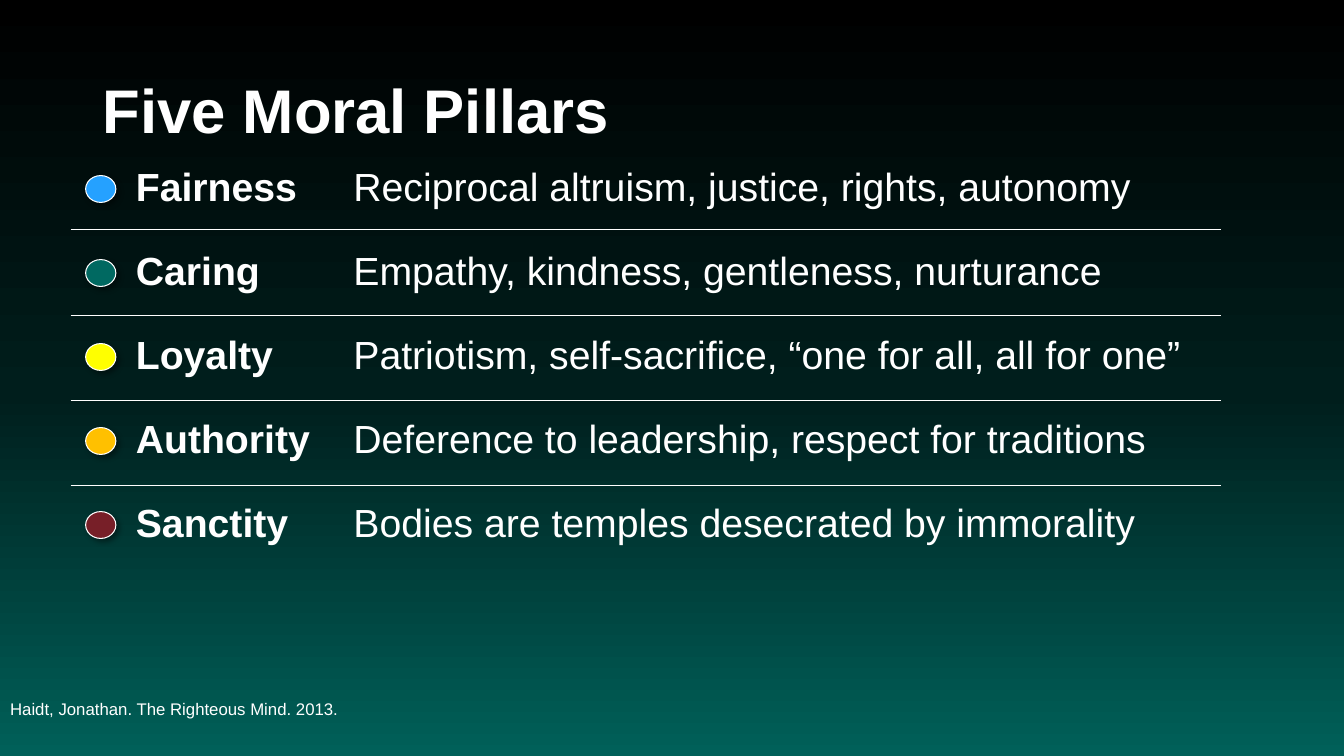
from copy import deepcopy

from lxml import etree
from pptx import Presentation
from pptx import util as u
from pptx.dml.color import RGBColor
from pptx.enum import shapes, text
from pptx.oxml.ns import qn

PILLARS = [
    ("Fairness", "25A1FF", "Reciprocal altruism, justice, rights, autonomy"),
    ("Caring", "006961", "Empathy, kindness, gentleness, nurturance"),
    ("Loyalty", "FFFF00", "Patriotism, self-sacrifice, “one for all, all for one”"),
    ("Authority", "FFC000", "Deference to leadership, respect for traditions"),
    ("Sanctity", "771F28", "Bodies are temples desecrated by immorality"),
]


def rgb(value):
    return RGBColor.from_string(value)


def add(parent, tag, **attributes):
    return etree.SubElement(parent, qn(tag), {k: str(v) for k, v in attributes.items()})


class PillarSlide:
    """Draws styled elements on one slide, measured on a grid of 16 columns by 9 rows."""

    font = "Arial"
    ink = "FFFFFF"
    rule = u.Pt(0.75)

    def __init__(self, deck):
        self.column = deck.slide_width / 16
        self.row = deck.slide_height / 9
        self.slide = deck.slides.add_slide(deck.slide_layouts[1])

    def area(self, left, top, width, height):
        return (int(left * self.column), int(top * self.row),
                int(width * self.column), int(height * self.row))

    def background(self, stops):
        fill = self.slide.background.fill
        fill.gradient()
        fill.gradient_angle = 270
        stop_list = self.slide.element.find(".//" + qn("a:gsLst"))
        while len(stop_list) < len(stops):
            stop_list.append(deepcopy(stop_list[0]))
        for stop, (position, color) in zip(fill.gradient_stops, stops):
            stop.position = position
            stop.color.rgb = rgb(color)

    def wording(self, frame, words, size, bold=False, spacing=1.0,
                anchor=text.MSO_ANCHOR.MIDDLE):
        frame.word_wrap = True
        frame.auto_size = text.MSO_AUTO_SIZE.NONE
        frame.vertical_anchor = anchor
        paragraph = frame.paragraphs[0]
        paragraph.alignment = text.PP_ALIGN.LEFT
        paragraph.line_spacing = spacing
        paragraph.space_before = u.Pt(0)
        run = paragraph.add_run()
        run.text = words
        run.font.name = self.font
        run.font.size = u.Pt(size)
        run.font.bold = bold
        run.font.color.rgb = rgb(self.ink)

    def placeholder(self, index, area, words, size, bold=False):
        holder = self.slide.placeholders[index]
        holder.left, holder.top, holder.width, holder.height = self.area(*area)
        properties = holder.text_frame.paragraphs[0]._p.get_or_add_pPr()
        properties.set("marL", "0")
        properties.set("indent", "0")
        add(properties, "a:buNone")
        self.wording(holder.text_frame, words, size, bold, 0.9)

    def ruled_table(self, area, rows):
        table = self.slide.shapes.add_table(rows, 1, *self.area(*area)).table
        table.first_row = table.horz_banding = False
        for index in range(rows):
            cell = table.cell(index, 0)
            properties = cell._tc.get_or_add_tcPr()
            sides = {"L": False, "R": False, "T": index > 0, "B": index < rows - 1}
            for side, ruled in sides.items():
                border = add(properties, "a:ln" + side, w=self.rule)
                if ruled:
                    add(add(border, "a:solidFill"), "a:srgbClr", val=self.ink)
                else:
                    add(border, "a:noFill")
            cell.fill.background()

    def dot(self, group, area, color):
        dot = group.shapes.add_shape(shapes.MSO_SHAPE.OVAL, *self.area(*area))
        dot.fill.solid()
        dot.fill.fore_color.rgb = rgb(color)
        dot.line.color.rgb = rgb(self.ink)
        dot.line.width = self.rule
        dot.shadow.inherit = False
        effects = dot._element.spPr.find(qn("a:effectLst"))
        shadow = add(effects, "a:outerShdw", blurRad=u.Pt(4), dist=u.Pt(3),
                     dir=45 * 60000, algn="tl", rotWithShape=0)
        add(add(shadow, "a:srgbClr", val="000000"), "a:alpha", val=40000)

    def label(self, parent, area, words, **style):
        box = parent.shapes.add_textbox(*self.area(*area))
        self.wording(box.text_frame, words, 28, **style)

    def pillar(self, top, name, color, meaning):
        group = self.slide.shapes.add_group_shape()
        self.dot(group, (1.02, top + 0.22, 0.36, 0.32), color)
        self.label(group, (1.5, top + 0.06, 2.7, 0.64), name, bold=True, spacing=0.9)
        self.label(self.slide, (4.09, top, 11.04, 0.68), meaning,
                   anchor=text.MSO_ANCHOR.TOP)


def main():
    deck = Presentation()
    deck.slide_width, deck.slide_height = u.Inches(13.33), u.Inches(7.5)
    page = PillarSlide(deck)
    page.background([(0, "000000"), (0.52, "001E1C"), (1, "006059")])
    page.ruled_table((0.84, 1.72, 13.7, 5.08), len(PILLARS))
    page.placeholder(0, (1.1, 0.48, 13.8, 1.74), "Five Moral Pillars", 44, bold=True)
    page.placeholder(1, (0, 7.9, 10.8, 1.1),
                     "Haidt, Jonathan. The Righteous Mind. 2013.", 12)
    for index, pillar in enumerate(PILLARS):
        page.pillar(1.87 + index, *pillar)
    deck.save("out.pptx")


if __name__ == "__main__":
    main()
